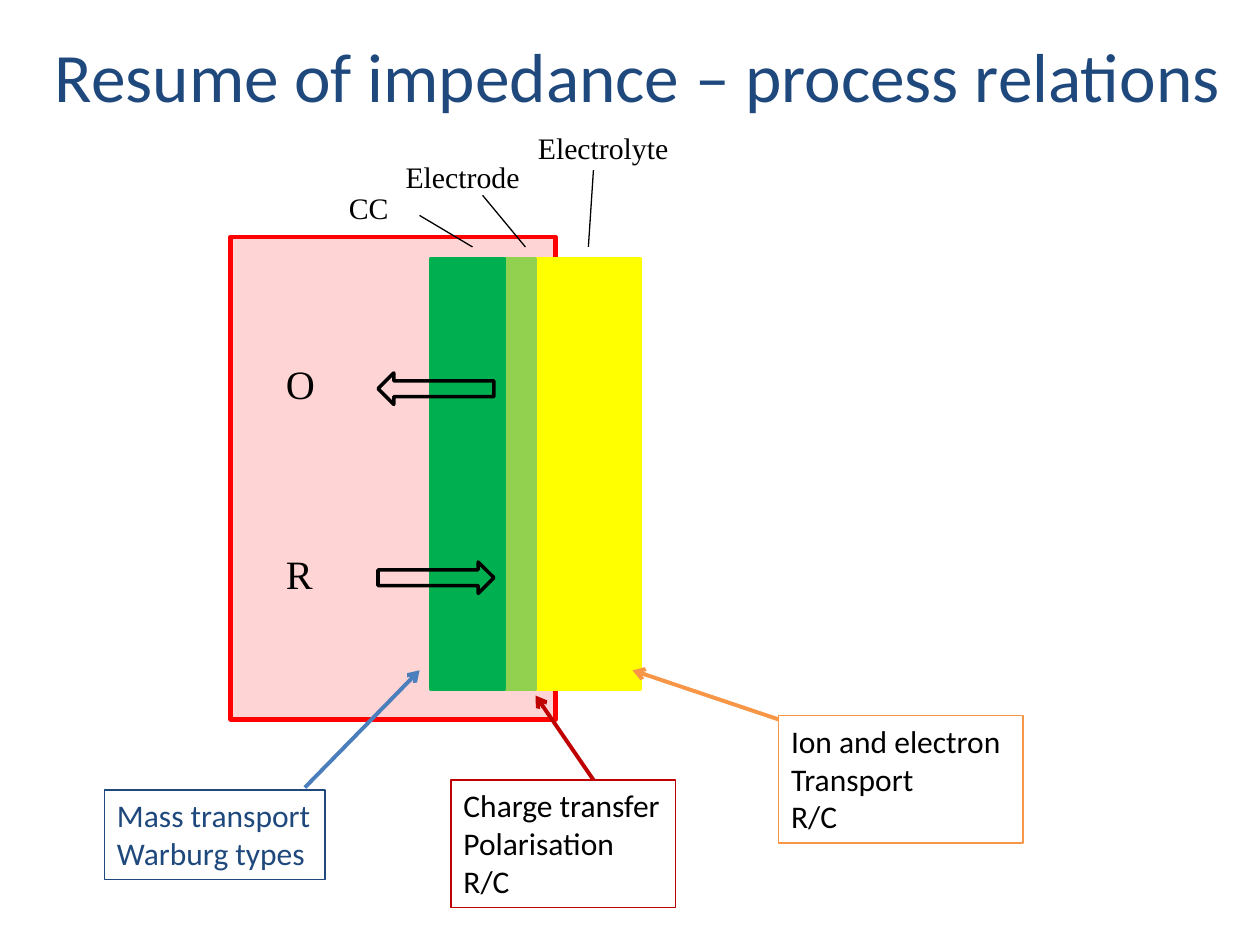
from typing import NamedTuple, Optional

from pptx import Presentation
from pptx.dml.color import RGBColor
from pptx.enum.shapes import MSO_CONNECTOR, MSO_SHAPE
from pptx.enum.text import MSO_ANCHOR, MSO_AUTO_SIZE, PP_ALIGN
from pptx.oxml.ns import qn
from pptx.util import Inches, Pt
from lxml.etree import SubElement

COLORS = {
    "black": "000000", "navy": "1F497D", "blue": "4B7EBC", "red": "FF0000",
    "dark_red": "C00000", "orange": "F79646", "yellow": "FFFF00",
    "light_green": "92D050", "green": "00B050",
}
SERIF, SANS = "Times New Roman", "Calibri"


class Block(NamedTuple):
    left: float
    top: float
    width: float
    height: float
    line: str
    weight: float
    fill: Optional[str] = None
    alpha: Optional[int] = None
    kind: int = MSO_SHAPE.RECTANGLE
    rotation: int = 0


class Label(NamedTuple):
    lines: tuple[str, ...]
    left: float
    top: float
    width: float
    height: float
    size: float
    font: str = SERIF
    color: str = "black"
    border: Optional[str] = None
    align: int = PP_ALIGN.LEFT
    anchor: int = MSO_ANCHOR.TOP
    wrap: bool = True


class Line(NamedTuple):
    start: tuple[float, float]
    end: tuple[float, float]
    color: str = "black"
    weight: float = 0.75
    arrow: bool = False


def rgb(name: str) -> RGBColor:
    return RGBColor.from_string(COLORS[name])


def add_block(page, block: Block) -> None:
    shape = page.shapes.add_shape(
        block.kind, Inches(block.left), Inches(block.top),
        Inches(block.width), Inches(block.height))
    shape.shadow.inherit = False
    shape.rotation = block.rotation
    shape.line.color.rgb = rgb(block.line)
    shape.line.width = Pt(block.weight)
    if block.fill is None:
        shape.fill.background()
        return
    shape.fill.solid()
    shape.fill.fore_color.rgb = rgb(block.fill)
    if block.alpha is not None:
        color = shape._element.spPr.find(qn("a:solidFill"))[0]
        SubElement(color, qn("a:alpha")).set("val", str(block.alpha * 1000))


def add_label(page, label: Label) -> None:
    box = page.shapes.add_textbox(
        Inches(label.left), Inches(label.top),
        Inches(label.width), Inches(label.height))
    if label.border:
        box.line.color.rgb = rgb(label.border)
        box.line.width = Pt(0.75)
    frame = box.text_frame
    frame.word_wrap = label.wrap
    frame.auto_size = MSO_AUTO_SIZE.NONE
    frame.vertical_anchor = label.anchor
    for index, text in enumerate(label.lines):
        para = frame.add_paragraph() if index else frame.paragraphs[0]
        para.alignment = label.align
        span = para.add_run()
        span.text = text
        span.font.name = label.font
        span.font.size = Pt(label.size)
        span.font.color.rgb = rgb(label.color)


def add_line(page, line: Line) -> None:
    connector = page.shapes.add_connector(
        MSO_CONNECTOR.STRAIGHT,
        *(Inches(value) for value in line.start + line.end))
    connector.line.color.rgb = rgb(line.color)
    connector.line.width = Pt(line.weight)
    if line.arrow:
        outline = connector.line._get_or_add_ln()
        SubElement(outline, qn("a:tailEnd")).set("type", "arrow")
    SubElement(connector._element.spPr, qn("a:effectLst"))


def layer(left: float, width: float, color: str) -> Block:
    return Block(left, 2.05, width, 3.42, color, 2, color)


def reaction_arrow(top: float, rotation: int = 0) -> Block:
    return Block(3, top, 0.92, 0.25, "black", 2,
                 kind=MSO_SHAPE.RIGHT_ARROW, rotation=rotation)


def process_box(lines: tuple[str, ...], left: float, top: float, width: float,
                height: float, border: str, color: str = "black") -> Label:
    return Label(lines, left, top, width, height, 18, SANS, color, border, wrap=False)


BLOCKS = [
    # Gas region behind the cell layers
    Block(1.83, 1.88, 2.58, 3.83, "red", 2.5, "red", 17),
    # Electrolyte, electrode and current collector
    layer(4.25, 0.83, "yellow"),
    layer(4, 0.25, "light_green"),
    layer(3.42, 0.58, "green"),
    reaction_arrow(4.46),
    reaction_arrow(2.96, 180),
]

LABELS = [
    Label(("Resume of impedance – process relations",), 0.12, -0.03, 9.88, 1.25,
          39.6, SANS, "navy", align=PP_ALIGN.CENTER, anchor=MSO_ANCHOR.MIDDLE),
    # Layer names
    Label(("CC",), 2.67, 1.46, 0.75, 0.39, 17),
    Label(("Electrode",), 3.12, 1.21, 1.12, 0.39, 17),
    Label(("Electrolyte",), 4.17, 0.98, 1.38, 0.39, 17),
    # Oxidised and reduced species
    Label(("O",), 2.17, 2.8, 0.75, 0.49, 23),
    Label(("R",), 2.17, 4.31, 0.58, 0.49, 23),
    # Process descriptions
    process_box(("Mass transport", "Warburg types"),
                0.83, 6.27, 1.75, 0.71, "navy", "navy"),
    process_box(("Charge transfer", "Polarisation", "R/C"),
                3.58, 6.19, 1.78, 1.01, "dark_red"),
    process_box(("Ion and electron", "Transport", "R/C"),
                6.18, 5.68, 1.94, 1.01, "orange"),
]

LINES = [
    # Leaders from the layer names
    Line((3.75, 1.96), (3.33, 1.71)),
    Line((4.17, 1.96), (3.83, 1.55)),
    Line((4.67, 1.96), (4.71, 1.35)),
    # Arrows from the process descriptions
    Line((6.18, 5.71), (5.02, 5.32), "orange", 2.25, True),
    Line((4.71, 6.19), (4.25, 5.52), "dark_red", 2.25, True),
    Line((2.42, 6.25), (3.33, 5.32), "blue", 2.25, True),
]


def main() -> None:
    deck = Presentation()
    deck.slide_width, deck.slide_height = Inches(10), Inches(7.5)
    page = deck.slides.add_slide(deck.slide_layouts[6])
    for block in BLOCKS:
        add_block(page, block)
    for label in LABELS:
        add_label(page, label)
    for line in LINES:
        add_line(page, line)
    deck.save("out.pptx")


if __name__ == "__main__":
    main()
